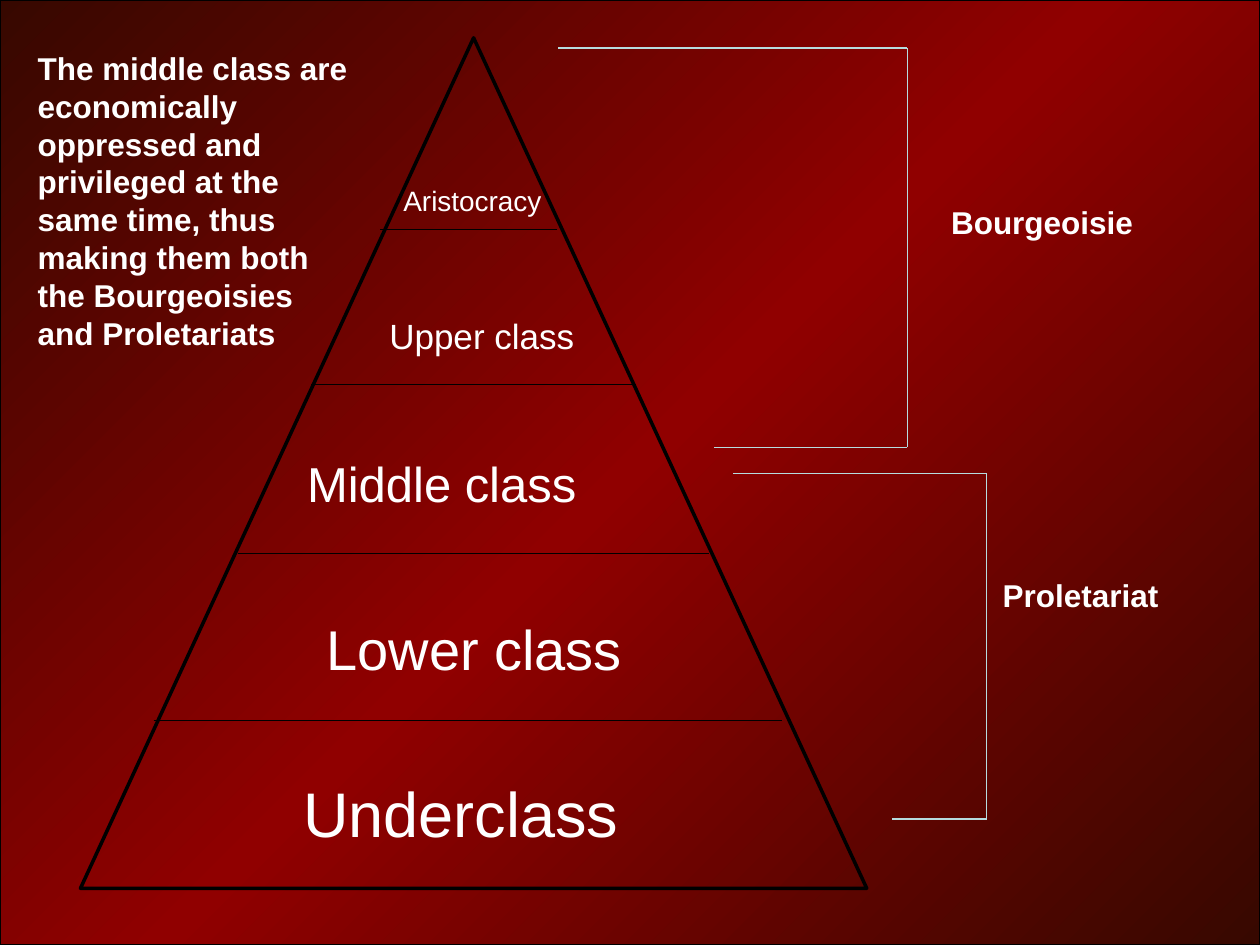
"""Build a slide with a social class pyramid and two class brackets."""
from copy import deepcopy

from pptx import Presentation
from pptx.dml.color import RGBColor
from pptx.enum import shapes, text
from pptx.oxml.ns import qn
from pptx.util import Pt

COLORS = {"edge": "370800", "glow": "900000", "black": "000000",
          "bracket": "B6DCDF", "text": "FFFFFF"}
SIZE = (720, 540)
GRADIENT = [(0, "edge"), (0.5, "glow"), (1, "edge")]
PYRAMID = (46, 21.6, 449.3, 486)

# (left, right, y)
DIVIDERS = [(87.8, 447.1, 411.8), (136.1, 405.4, 316.1),
            (177.8, 363.6, 219.6), (217.4, 318.2, 131)]
# (top left, bottom left, right, top, bottom)
BRACKETS = [(319, 408.2, 518.4, 27.4, 255.6),
            (419, 509.8, 563.8, 270.7, 468)]
CLASSES = [
    ("Underclass", 36, (121, 439.2, 284.4, 51.1)),
    ("Lower class", 32, (167.8, 347.8, 206.6, 46.1)),
    ("Middle class", 28, (154.1, 255.6, 196.6, 41)),
    ("Upper class", 20, (210.2, 176.4, 130.3, 31.7)),
    ("Aristocracy", 16, (198, 101.5, 144, 26.6)),
]
NOTES = [
    ("Bourgeoisie", (536.4, 112.3, 149.8, 28.8)),
    ("Proletariat", (565.9, 325.4, 138.2, 28.8)),
    ("The middle class are economically oppressed and privileged at the same "
     "time, thus making them both the Bourgeoisies and Proletariats",
     (14.4, 24.5, 195.8, 181.4)),
]


def rgb(name):
    return RGBColor.from_string(COLORS[name])


def style_line(sp, color, width):
    sp.line.color.rgb = rgb(color)
    sp.line.width = Pt(width)


def add_shape(slide, kind, box, width):
    sp = slide.shapes.add_shape(kind, *map(Pt, box))
    sp.shadow.inherit = False
    style_line(sp, "black", width)
    return sp


def fill_gradient(sp):
    sp.fill.gradient()
    sp.fill.gradient_angle = 315
    stops = sp.fill._fill._gradFill.find(qn("a:gsLst"))
    stops.insert(1, deepcopy(stops[0]))
    for stop, (position, color) in zip(sp.fill.gradient_stops, GRADIENT):
        stop.position = position
        stop.color.rgb = rgb(color)


def add_line(slide, start, end, color):
    line = slide.shapes.add_connector(
        shapes.MSO_CONNECTOR.STRAIGHT, *map(Pt, start + end))
    style_line(line, color, 0.75)
    sp_pr = line._element.spPr
    sp_pr.append(sp_pr.makeelement(qn("a:effectLst"), {}))


def add_text(slide, words, size, box, align=None, bold=None):
    tf = slide.shapes.add_textbox(*map(Pt, box)).text_frame
    tf.word_wrap = True
    tf.auto_size = text.MSO_AUTO_SIZE.SHAPE_TO_FIT_TEXT
    tf.text = words
    p = tf.paragraphs[0]
    p.alignment = align
    font = p.runs[0].font
    font.name, font.size, font.bold = "Arial", Pt(size), bold
    font.color.rgb = rgb("text")


def main():
    prs = Presentation()
    prs.slide_width, prs.slide_height = map(Pt, SIZE)
    slide = prs.slides.add_slide(prs.slide_layouts[6])

    backdrop = add_shape(slide, shapes.MSO_SHAPE.RECTANGLE, (0, 0) + SIZE, 0.75)
    fill_gradient(backdrop)
    pyramid = add_shape(slide, shapes.MSO_SHAPE.ISOSCELES_TRIANGLE, PYRAMID, 2)
    pyramid.fill.background()

    for left, right, y in DIVIDERS:
        add_line(slide, (left, y), (right, y), "black")
    for words, size, box in CLASSES:
        add_text(slide, words, size, box, align=text.PP_ALIGN.CENTER)
    for top_left, bottom_left, right, top, bottom in BRACKETS:
        corners = [(top_left, top), (right, top), (right, bottom), (bottom_left, bottom)]
        for start, end in zip(corners, corners[1:]):
            add_line(slide, start, end, "bracket")
    for words, box in NOTES:
        add_text(slide, words, 18, box, bold=True)

    prs.save("out.pptx")


if __name__ == "__main__":
    main()
